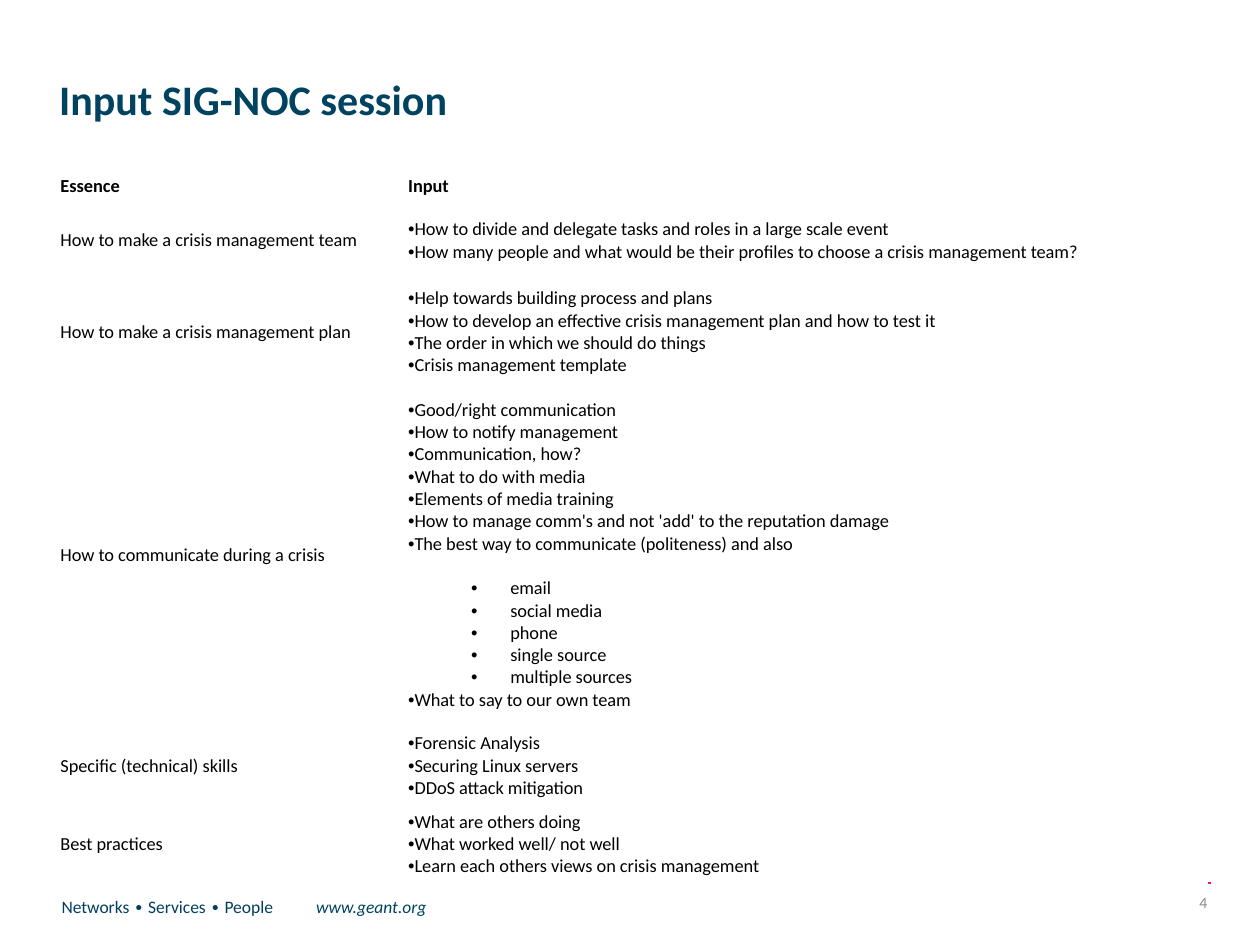
from lxml import etree
from pptx import Presentation
from pptx.dml.color import RGBColor
from pptx.enum import shapes, text
from pptx.oxml import ns
from pptx.util import Inches, Pt

TITLE = "Input SIG-NOC session"
HEADER = ("Essence", "Input")
TOPICS = [
    ("How to make a crisis management team", 0.64, [
        "How to divide and delegate tasks and roles in a large scale event",
        "How many people and what would be their profiles to choose a crisis management team?"]),
    ("How to make a crisis management plan", 0.81, [
        "Help towards building process and plans",
        "How to develop an effective crisis management plan and how to test it",
        "The order in which we should do things",
        "Crisis management template"]),
    ("How to communicate during a crisis", 2.73, [
        "Good/right communication",
        "How to notify management",
        "Communication, how?",
        "What to do with media",
        "Elements of media training",
        "How to manage comm's and not 'add' to the reputation damage",
        "The best way to communicate (politeness) and also",
        ["email", "social media", "phone", "single source", "multiple sources"],
        "What to say to our own team"]),
    ("Specific (technical) skills", 0.62, [
        "Forensic Analysis", "Securing Linux servers", "DDoS attack mitigation"]),
    ("Best practices", 0.62, [
        "What are others doing",
        "What worked well/ not well",
        "Learn each others views on crisis management"]),
]
COLS = (2.76, 6.39)
HEADER_H = 0.23
NAVY, TEAL, PINK, GREY, BLACK = "004361", "003F5E", "ED1556", "8C8C8C", "000000"
MIDDLE = text.MSO_ANCHOR.MIDDLE


def rgb(value):
    return RGBColor.from_string(value)


def style(font, color, **values):
    font.color.rgb = rgb(color)
    for name, value in {"name": "Calibri", **values}.items():
        setattr(font, name, value)


def add_bullet(p, level):
    pPr = p._p.get_or_add_pPr()
    pPr.set("marL", str(Inches(0.81 * level)))
    pPr.set("indent", str(Inches(-0.31 * level)))
    p.level = level
    etree.SubElement(pPr, ns.qn("a:buFont")).set("typeface", "Arial")
    etree.SubElement(pPr, ns.qn("a:buChar")).set("char", "•")


def fill_cell(cell, items, bold=False, bullets=False):
    cell.fill.background()
    cell.vertical_anchor = MIDDLE
    for side, margin in zip(("left", "top", "right", "bottom"), (0.05, 0.02) * 2):
        setattr(cell, f"margin_{side}", Inches(margin))
    lines = []
    for item in items:
        if isinstance(item, list):
            lines += [(sub, 1, i == 0) for i, sub in enumerate(item)]
        else:
            lines.append((item, 0, False))
    tf = cell.text_frame
    for i, (line, level, opens_list) in enumerate(lines):
        p = tf.add_paragraph() if i else tf.paragraphs[0]
        if bullets:
            add_bullet(p, level)
        if opens_list:
            p.space_before = Pt(12.8)
        r = p.add_run()
        r.text = line
        style(r.font, BLACK, size=Pt(10.5), bold=bold)


def add_text(s, box, runs):
    tf = s.shapes.add_textbox(*map(Inches, box)).text_frame
    tf.word_wrap = True
    p = tf.paragraphs[0]
    for words, color, values in runs:
        r = p.add_run()
        r.text = words
        style(r.font, color, **values)
    return tf


prs = Presentation()
prs.slide_width, prs.slide_height = Inches(10), Inches(7.5)
s = prs.slides.add_slide(prs.slide_layouts[5])

rule = s.shapes.add_connector(shapes.MSO_CONNECTOR.STRAIGHT,
                              *map(Inches, (0.47, 7.01, 9.61, 7.01)))
rule.line.color.rgb = rgb(PINK)
rule.line.width = Pt(1)
etree.SubElement(rule._element.spPr, ns.qn("a:effectLst"))

footer = add_text(s, (0.39, 7.06, 3.41, 0.44), [
    ("Networks ∙ Services ∙ People\t", TEAL, {"size": Pt(10)}),
    ("www.geant.org", NAVY, {"size": Pt(10), "italic": True})])
tabs = etree.SubElement(footer.paragraphs[0]._p.get_or_add_pPr(), ns.qn("a:tabLst"))
etree.SubElement(tabs, ns.qn("a:tab"), pos=str(Inches(2.02)), algn="l")

number = add_text(s, (9.07, 7.01, 0.61, 0.3), [("4", GREY, {"size": Pt(9)})])
number.vertical_anchor = MIDDLE
number.paragraphs[0].alignment = text.PP_ALIGN.RIGHT

title = s.shapes.title
for name, value in zip(("left", "top", "width", "height"), (0.37, 0.08, 7.88, 1.45)):
    setattr(title, name, Inches(value))
tf = title.text_frame
tf.text = TITLE
tf.vertical_anchor = MIDDLE
p = tf.paragraphs[0]
p.alignment = text.PP_ALIGN.LEFT
p.line_spacing = 0.9
style(p.runs[0].font, NAVY, size=Pt(24), bold=True)

heights = [HEADER_H] + [height for _, height, _ in TOPICS]
table = s.shapes.add_table(len(heights), len(COLS), Inches(0.43), Inches(1.36),
                           Inches(sum(COLS)), Inches(sum(heights))).table
table.first_row = table.horz_banding = False
for col, width in zip(table.columns, COLS):
    col.width = Inches(width)
for row, height in zip(table.rows, heights):
    row.height = Inches(height)
for c, label in enumerate(HEADER):
    fill_cell(table.cell(0, c), [label], bold=True)
for i, (essence, _, inputs) in enumerate(TOPICS, 1):
    fill_cell(table.cell(i, 0), [essence])
    fill_cell(table.cell(i, 1), inputs, bullets=True)

prs.save("out.pptx")
